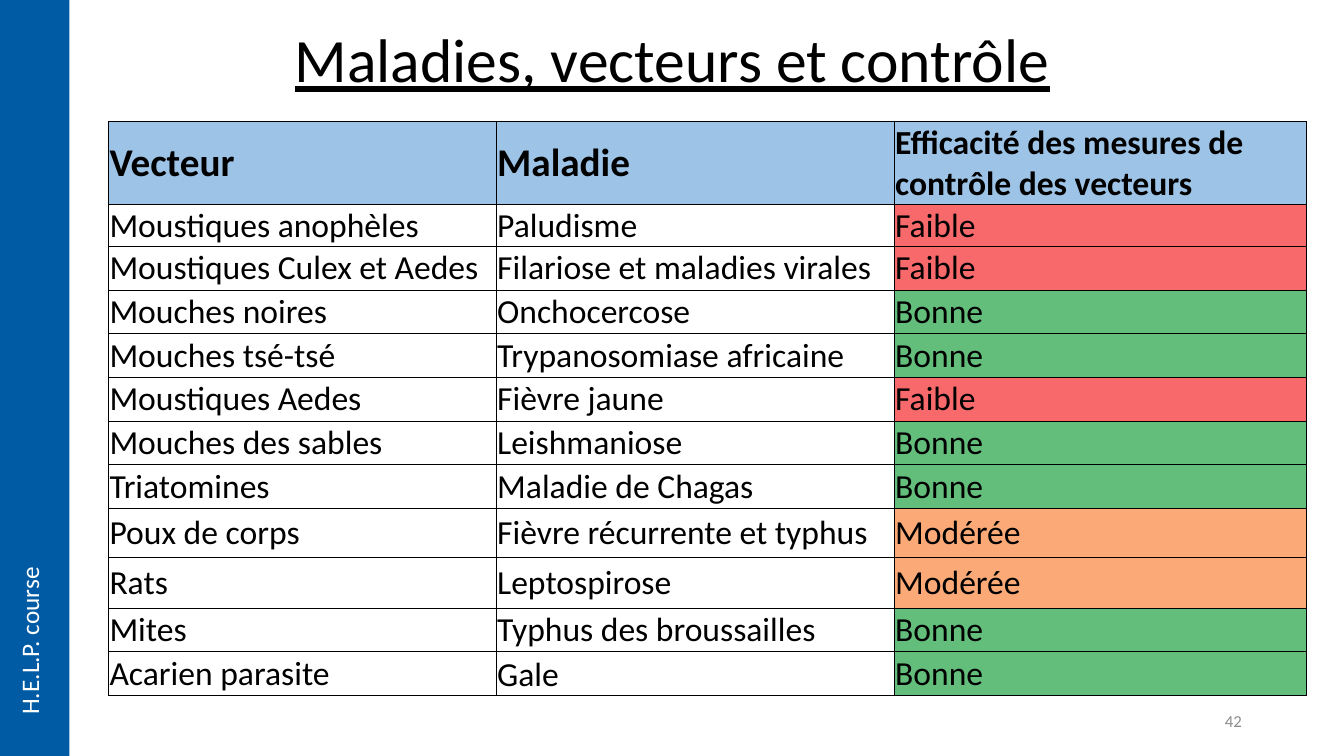
from lxml.etree import SubElement as Sub
from pptx import Presentation
from pptx.dml.color import RGBColor
from pptx.enum.shapes import MSO_SHAPE as Form
from pptx.enum.text import MSO_ANCHOR as Anchor, MSO_AUTO_SIZE as Auto, PP_ALIGN as Align
from pptx.oxml.ns import qn
from pptx.util import Cm, Pt

BLUE, HEAD, BLACK, WHITE, GREY = "005BA4", "9DC3E6", "000000", "FFFFFF", "8C8C8C"
RATES = {"Faible": "F8696B", "Bonne": "63BE7B", "Modérée": "FBAA77"}
WIDTHS = [9.77, 10.03, 10.39]
HEIGHTS = [2.07, 1.06] + [1.1] * 6 + [1.24, 1.27, 1.1, 1.1]
ROWS = [
    ("Vecteur", "Maladie", "Efficacité des mesures de contrôle des vecteurs"),
    ("Moustiques anophèles", "Paludisme", "Faible"),
    ("Moustiques Culex et Aedes", "Filariose et maladies virales", "Faible"),
    ("Mouches noires", "Onchocercose", "Bonne"),
    ("Mouches tsé-tsé", "Trypanosomiase africaine", "Bonne"),
    ("Moustiques Aedes", "Fièvre jaune", "Faible"),
    ("Mouches des sables", "Leishmaniose", "Bonne"),
    ("Triatomines", "Maladie de Chagas", "Bonne"),
    ("Poux de corps", "Fièvre récurrente et typhus", "Modérée"),
    ("Rats", "Leptospirose", "Modérée"),
    ("Mites", "Typhus des broussailles", "Bonne"),
    ("Acarien parasite", "Gale", "Bonne"),
]


def tint(code):
    return RGBColor.from_string(code)


class Deck:
    """Holds the font and the current slide, and draws each kind of element."""

    def __init__(self, slide, font):
        self.slide, self.font = slide, font

    def words(self, frame, text, size, color=BLACK, align=Align.LEFT, **style):
        frame.text = text
        para = frame.paragraphs[0]
        para.alignment = align
        for name, value in {"name": self.font, "size": Pt(size), **style}.items():
            setattr(para.font, name, value)
        para.font.color.rgb = tint(color)
        return para

    def title(self, text, *area):
        shape = self.slide.shapes.title
        shape.left, shape.top, shape.width, shape.height = map(Cm, area)
        frame = shape.text_frame
        frame.auto_size, frame.vertical_anchor = Auto.NONE, Anchor.MIDDLE
        para = self.words(frame, text, 44, align=Align.CENTER, underline=True)
        para.line_spacing = 0.9

    def band(self, color, *area):
        shape = self.slide.shapes.add_shape(Form.RECTANGLE, *map(Cm, area))
        shape.shadow.inherit = False
        shape.fill.solid()
        shape.fill.fore_color.rgb = tint(color)
        shape.line.fill.background()

    def label(self, text, size, color, *area, align=Align.LEFT, turn=False):
        frame = self.slide.shapes.add_textbox(*map(Cm, area)).text_frame
        frame.word_wrap = not turn
        if turn:
            frame._txBody.bodyPr.set("vert", "vert270")
        else:
            frame.vertical_anchor = Anchor.MIDDLE
        self.words(frame, text, size, color, align)

    def border(self, cell):
        props = cell._tc.get_or_add_tcPr()
        for side in ("a:lnL", "a:lnR", "a:lnT", "a:lnB"):
            line = Sub(props, qn(side), w=str(Pt(0.5)))
            Sub(Sub(line, qn("a:solidFill")), qn("a:srgbClr"), val=BLACK)

    def cell(self, cell, text, size, bold, fill):
        for side in ("left", "right", "top"):
            setattr(cell, f"margin_{side}", Cm(0.02))
        cell.margin_bottom = 0
        cell.vertical_anchor = Anchor.MIDDLE
        self.words(cell.text_frame, text, size, bold=bold)
        self.border(cell)
        if fill:
            cell.fill.solid()
            cell.fill.fore_color.rgb = tint(fill)
        else:
            cell.fill.background()

    def table(self, left, top):
        area = map(Cm, (left, top, sum(WIDTHS), sum(HEIGHTS)))
        grid = self.slide.shapes.add_table(len(ROWS), len(WIDTHS), *area).table
        grid.first_row = grid.horz_banding = False
        for col, width in zip(grid.columns, WIDTHS):
            col.width = Cm(width)
        for r, (row, height) in enumerate(zip(ROWS, HEIGHTS)):
            grid.rows[r].height = Cm(height)
            for c, text in enumerate(row):
                top_row = r == 0
                size = 28 if top_row and c < 2 else 24
                fill = HEAD if top_row else RATES.get(text)
                self.cell(grid.cell(r, c), text, size, top_row, fill)
        grid.cell(len(ROWS) - 1, 1).vertical_anchor = Anchor.BOTTOM


def main():
    show = Presentation()
    show.slide_width, show.slide_height = Cm(33.87), Cm(19.05)
    deck = Deck(show.slides.add_slide(show.slide_layouts[5]), "Calibri")
    deck.band(BLUE, 0, 0, 1.75, 19.05)
    deck.label("H.E.L.P. course", 18, WHITE, 0.23, 14.25, 1.27, 4.01, turn=True)
    deck.title("Maladies, vecteurs et contrôle", 2.34, 0.43, 29.21, 2.31)
    deck.table(2.74, 3.06)
    deck.label("42", 12, GREY, 23.93, 17.65, 7.62, 1.02, align=Align.RIGHT)
    show.save("out.pptx")


if __name__ == "__main__":
    main()
